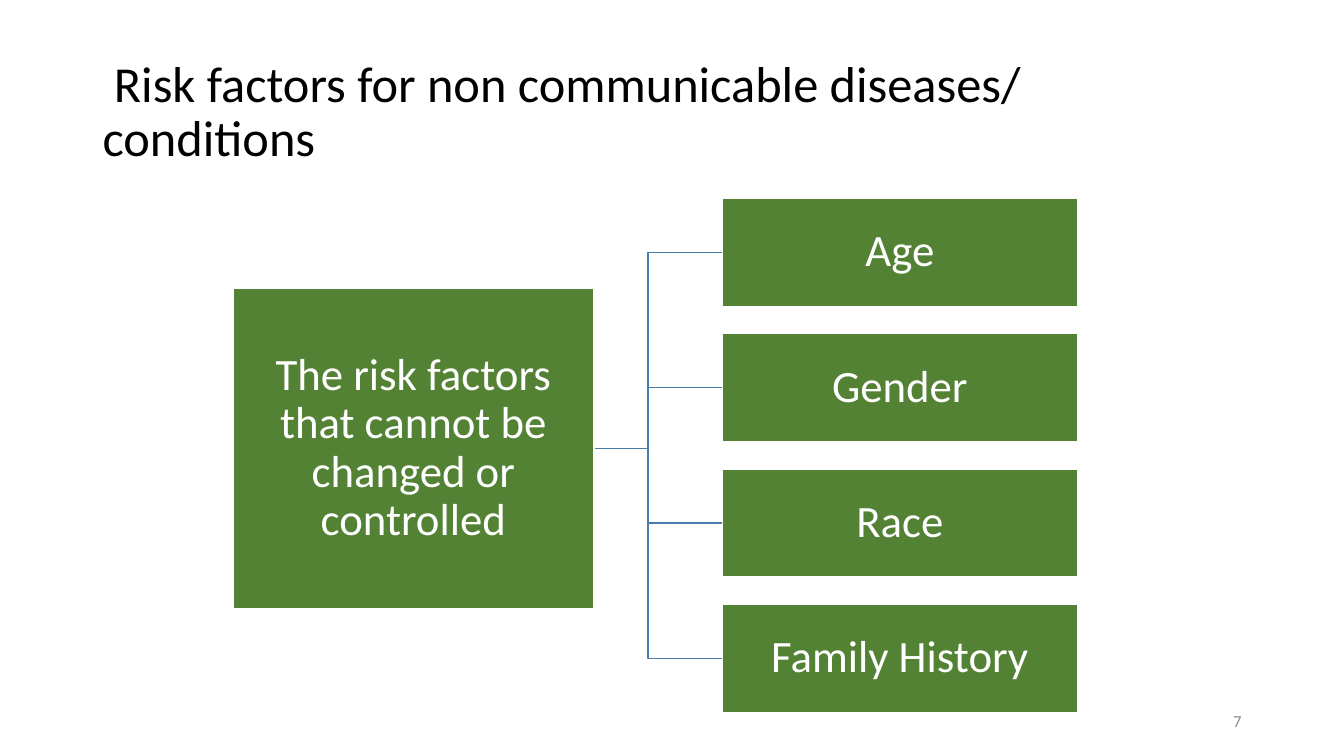
from pptx import Presentation
from pptx.dml.color import RGBColor
from pptx.enum.shapes import MSO_SHAPE
from pptx.enum.text import MSO_ANCHOR, PP_ALIGN
from pptx.util import Cm, Pt

RECT = MSO_SHAPE.RECTANGLE
MIDDLE = MSO_ANCHOR.MIDDLE
LEFT, CENTER, RIGHT = PP_ALIGN.LEFT, PP_ALIGN.CENTER, PP_ALIGN.RIGHT

TITLE = " Risk factors for non communicable diseases/ conditions"
ROOT = "The risk factors that cannot be changed or controlled"
FACTORS = ["Age", "Gender", "Race", "Family History"]
NUMBER = "7"

FONT = "Calibri"
COLORS = {"black": "000000", "white": "FFFFFF", "green": "548235",
          "blue": "497CAB", "gray": "8C8C8C"}

# Lengths in centimetres: left, top, width, height
TITLE_BOX = (2.33, 1.01, 29.21, 3.68)
NUMBER_BOX = (23.92, 17.66, 7.62, 1.01)
ROOT_BOX = (5.87, 7.26, 9.1, 8.08)
FACTOR_BOX = (18.21, 5.0, 8.94, 2.72)
PITCH = 3.41
TRUNK = 16.33
INSET = 0.05


def color(name):
    return RGBColor.from_string(COLORS[name])


def place(box):
    return [Cm(length) for length in box]


def write(frame, text, size, ink, align, spacing=None):
    frame.word_wrap = True
    frame.vertical_anchor = MIDDLE
    frame.text = text
    para = frame.paragraphs[0]
    para.alignment = align
    para.line_spacing = spacing
    para.font.name = FONT
    para.font.size = Pt(size)
    para.font.color.rgb = color(ink)


def outline(shape, ink):
    shape.shadow.inherit = False
    shape.line.color.rgb = color(ink)
    shape.line.width = Pt(1)


def add_box(slide, box, text):
    shape = slide.shapes.add_shape(RECT, *place(box))
    outline(shape, "white")
    shape.fill.solid()
    shape.fill.fore_color.rgb = color("green")
    frame = shape.text_frame
    frame.margin_left = frame.margin_right = Cm(INSET)
    frame.margin_top = frame.margin_bottom = Cm(INSET)
    write(frame, text, 32, "white", CENTER, 0.9)


def add_branch(slide, start, end):
    """Draw an elbow line that turns at the trunk."""
    points = [start, (TRUNK, start[1]), (TRUNK, end[1]), end]
    first, *rest = [place(point) for point in points]
    path = slide.shapes.build_freeform(*first)
    path.add_line_segments(rest, close=False)
    shape = path.convert_to_shape()
    shape.fill.background()
    outline(shape, "blue")


def main():
    deck = Presentation()
    deck.slide_width, deck.slide_height = Cm(33.87), Cm(19.05)
    slide = deck.slides.add_slide(deck.slide_layouts[5])

    title = slide.shapes.title
    title.left, title.top, title.width, title.height = place(TITLE_BOX)
    write(title.text_frame, TITLE, 36, "black", LEFT, 0.9)

    number = slide.shapes.add_textbox(*place(NUMBER_BOX))
    write(number.text_frame, NUMBER, 12, "gray", RIGHT)

    left, top, width, height = ROOT_BOX
    start = (left + width, top + height / 2)
    left, top, width, height = FACTOR_BOX
    tops = [top + i * PITCH for i in range(len(FACTORS))]
    for y in tops:
        add_branch(slide, start, (left, y + height / 2))
    add_box(slide, ROOT_BOX, ROOT)
    for y, factor in zip(tops, FACTORS):
        add_box(slide, (left, y, width, height), factor)

    deck.save("out.pptx")


if __name__ == "__main__":
    main()
